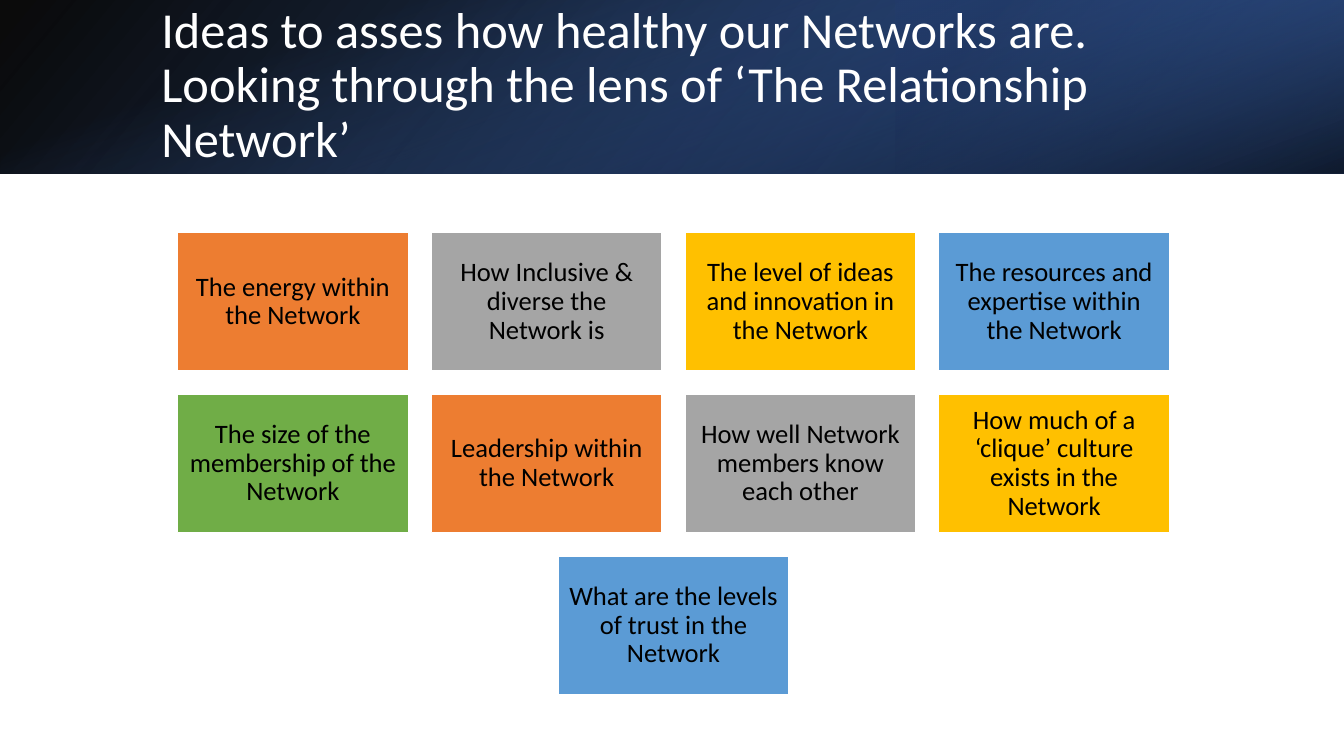
import dataclasses

import lxml.etree
import pptx
import pptx.dml.color
import pptx.enum.shapes
import pptx.enum.text
import pptx.oxml.ns
import pptx.util

Inches = pptx.util.Inches


@dataclasses.dataclass(frozen=True)
class Theme:
    """Colours, font and type sizes of the slide."""
    font: str = "Calibri"
    title_size: int = 36
    card_size: int = 19
    white: str = "FFFFFF"
    black: str = "000000"
    navy: str = "203864"
    deep_blue: str = "2F5597"
    blue: str = "4472C4"
    orange: str = "ED7D31"
    grey: str = "A5A5A5"
    gold: str = "FFC000"
    sky: str = "5B9BD5"
    green: str = "70AD47"


THEME = Theme()

TITLE = ("Ideas to asses how healthy our Networks are. "
         "Looking through the lens of ‘The Relationship Network’")

CARDS = [
    ("The energy within the Network", THEME.orange),
    ("How Inclusive & diverse the Network is", THEME.grey),
    ("The level of ideas and innovation in the Network", THEME.gold),
    ("The resources and expertise within the Network", THEME.sky),
    ("The size of the membership of the Network", THEME.green),
    ("Leadership within the Network", THEME.orange),
    ("How well Network members know each other", THEME.grey),
    ("How much of a ‘clique’ culture exists in the Network", THEME.gold),
    ("What are the levels of trust in the Network", THEME.sky),
]


def rgb(value):
    """Return the colour for a hex string."""
    return pptx.dml.color.RGBColor.from_string(value)


def apply(target, formats):
    """Set each attribute of the target from a dict of format values."""
    for name, value in formats.items():
        setattr(target, name, value)


def write_text(shape, text, size, colour, alignment, inset):
    """Write one formatted, vertically centred paragraph in the shape."""
    frame = shape.text_frame
    frame.text = text
    margins = dict.fromkeys(
        ("margin_left", "margin_top", "margin_right", "margin_bottom"), Inches(inset))
    apply(frame, {
        "word_wrap": True,
        "auto_size": pptx.enum.text.MSO_AUTO_SIZE.NONE,
        "vertical_anchor": pptx.enum.text.MSO_ANCHOR.MIDDLE,
        **margins,
    })
    paragraph = frame.paragraphs[0]
    apply(paragraph, {"alignment": alignment, "line_spacing": 0.9})
    apply(paragraph.font, {"name": THEME.font, "size": pptx.util.Pt(size)})
    paragraph.font.color.rgb = rgb(colour)


def add_rectangle(slide, left, top, width, height):
    """Add a rectangle without a shadow."""
    shape = slide.shapes.add_shape(
        pptx.enum.shapes.MSO_SHAPE.RECTANGLE,
        Inches(left), Inches(top), Inches(width), Inches(height))
    shape.shadow.inherit = False
    return shape


def add_gradient(slide, box, stops, angle, rotation=0, flipped=False):
    """Add a borderless gradient rectangle with (position, colour, opacity) stops."""
    shape = add_rectangle(slide, *box)
    shape.rotation = rotation
    shape.line.fill.background()
    shape.fill.gradient()
    shape.fill.gradient_angle = 360 - angle
    for stop, (position, colour, _) in zip(shape.fill.gradient_stops, stops):
        stop.position = position / 100
        stop.color.rgb = rgb(colour)
    properties = shape._element.spPr
    colours = properties.iter(pptx.oxml.ns.qn("a:srgbClr"))
    for element, (_, _, opacity) in zip(colours, stops):
        alpha = lxml.etree.SubElement(element, pptx.oxml.ns.qn("a:alpha"))
        alpha.set("val", str(opacity * 1000))
    if flipped:
        properties.xfrm.set("flipH", "1")


def add_header(slide, left, top, width, height):
    """Build the gradient band and the title inside the given box."""
    add_gradient(slide, (left, top, width, height),
                 [(0, THEME.black, 96), (100, THEME.deep_blue, 100)], 140, flipped=True)
    add_gradient(slide, (left + width * 2 / 3, top, width / 3, height),
                 [(19, THEME.navy, 68), (100, THEME.blue, 79)], 320,
                 rotation=180, flipped=True)
    offset = (width - height) / 2
    add_gradient(slide, (left + offset, top - offset, height, width),
                 [(23, THEME.blue, 0), (99, THEME.black, 74)], 340, rotation=90)

    title = slide.shapes.title
    apply(title, {"left": Inches(left + 1.5), "top": Inches(top + 0.38),
                  "width": Inches(10.98), "height": Inches(0.96)})
    write_text(title, TITLE, THEME.title_size, THEME.white,
               pptx.enum.text.PP_ALIGN.LEFT, 0.1)
    slide.shapes._spTree.append(title._element)


def add_cards(slide, left, top, width, height, columns=4):
    """Lay the cards out in centred rows that fill the given box."""
    card_width, card_height = 2.29, 1.37
    rows = [CARDS[start:start + columns] for start in range(0, len(CARDS), columns)]
    step_x = (width - card_width) / (columns - 1)
    step_y = (height - card_height) / (len(rows) - 1)
    for row, cards in enumerate(rows):
        indent = (columns - len(cards)) * step_x / 2
        for column, (text, colour) in enumerate(cards):
            card = add_rectangle(slide, left + indent + column * step_x,
                                 top + row * step_y, card_width, card_height)
            card.fill.solid()
            card.fill.fore_color.rgb = rgb(colour)
            card.line.color.rgb = rgb(THEME.white)
            card.line.width = pptx.util.Pt(1)
            write_text(card, text, THEME.card_size, THEME.black,
                       pptx.enum.text.PP_ALIGN.CENTER, 0.08)


def main():
    """Build and save the presentation."""
    presentation = pptx.Presentation()
    apply(presentation, {"slide_width": Inches(13.33), "slide_height": Inches(7.5)})
    slide = presentation.slides.add_slide(presentation.slide_layouts[5])
    add_header(slide, 0, 0, 13.33, 1.72)
    add_cards(slide, 1.76, 2.31, 9.84, 4.58)
    presentation.save("out.pptx")


if __name__ == "__main__":
    main()
